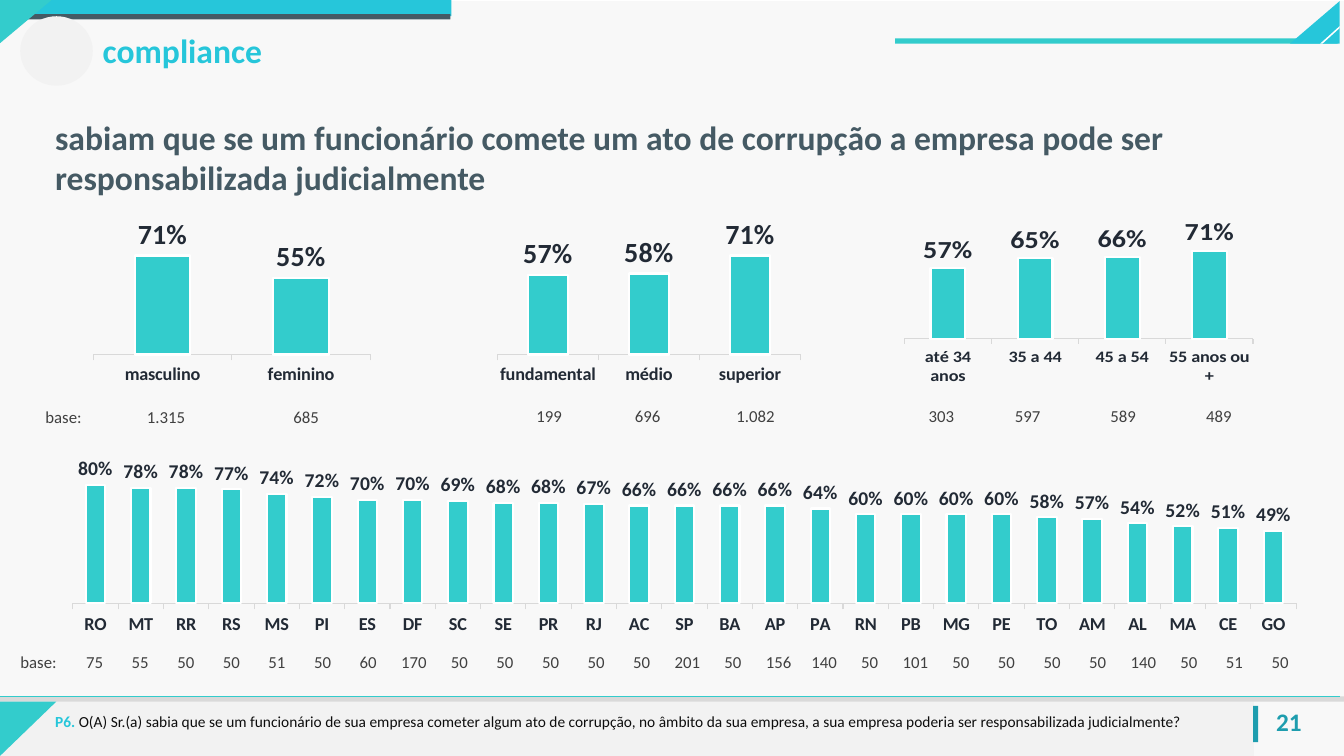
"""Build the compliance slide: awareness of company liability by gender, education, age and state."""
from lxml import etree
from pptx import Presentation
from pptx.chart.data import CategoryChartData
from pptx.dml.color import RGBColor
from pptx.enum.chart import XL_CHART_TYPE, XL_LABEL_POSITION, XL_TICK_MARK
from pptx.enum.dml import MSO_PATTERN
from pptx.enum.shapes import MSO_CONNECTOR, MSO_SHAPE
from pptx.enum.text import MSO_ANCHOR, PP_ALIGN
from pptx.oxml import parse_xml
from pptx.oxml.ns import nsdecls, qn
from pptx.util import Cm, Pt

RECT, OVAL = MSO_SHAPE.RECTANGLE, MSO_SHAPE.OVAL
LEFT, CENTER = PP_ALIGN.LEFT, PP_ALIGN.CENTER
COLUMNS = XL_CHART_TYPE.COLUMN_CLUSTERED
OUTSIDE_END = XL_LABEL_POSITION.OUTSIDE_END
TICK_OUT, TICK_NONE = XL_TICK_MARK.OUTSIDE, XL_TICK_MARK.NONE
W, H = 33.87, 19.05
FONT = "Calibri"
TEAL, CYAN, DARK_TEAL = "33CCCC", "26C6DA", "1E9DAE"
SLATE, NAVY, PALE = "455A64", "222A35", "F2F2F2"
NO_GRID_STYLE = "{2D5ABB26-0587-4C30-8999-92F81FD0307C}"
PLOT_BOX = {"x": 0.036, "y": 0.167, "w": 0.928, "h": 0.659}


def rgb(color):
    """Turn a hex string into a colour."""
    return RGBColor.from_string(color)


def set_font(font, size, color, bold=False):
    """Set face, size, colour and weight of a font."""
    font.name, font.size, font.bold = FONT, Pt(size), bold
    font.color.rgb = rgb(color)


def add_block(s, kind, x, y, w, h, color):
    """Add a plain filled shape."""
    sp = s.shapes.add_shape(kind, Cm(x), Cm(y), Cm(w), Cm(h))
    sp.shadow.inherit = False
    sp.fill.solid()
    sp.fill.fore_color.rgb = rgb(color)
    sp.line.fill.background()
    return sp


def add_polygon(s, points, color):
    """Add a filled closed outline."""
    start, *rest = [(Cm(x), Cm(y)) for x, y in points]
    builder = s.shapes.build_freeform(*start)
    builder.add_line_segments(rest, close=True)
    sp = builder.convert_to_shape()
    sp.shadow.inherit = False
    sp.fill.solid()
    sp.fill.fore_color.rgb = rgb(color)
    sp.line.fill.background()


def add_text(s, x, y, w, h, runs, size, align=LEFT, wrap=True):
    """Add a one-paragraph text box from (text, colour, bold) runs."""
    tf = s.shapes.add_textbox(Cm(x), Cm(y), Cm(w), Cm(h)).text_frame
    tf.word_wrap = wrap
    p = tf.paragraphs[0]
    p.alignment = align
    p.font.name, p.font.size = FONT, Pt(size)
    for text, color, bold in runs:
        r = p.add_run()
        r.text = text
        r.font.bold = bold
        r.font.color.rgb = rgb(color)


def add_backdrop(s, x, y, w, h):
    """Cover the box with the finely striped background."""
    sp = add_block(s, RECT, x, y, w, h, "FFFFFF")
    sp.fill.patterned()
    sp.fill.pattern = MSO_PATTERN.DARK_HORIZONTAL
    sp.fill.fore_color.rgb = rgb("F8F8F8")
    sp.fill.back_color.rgb = rgb("FFFFFF")


def add_header(s, x, y, w):
    """Draw the top bars and corners, the section name and the headline."""
    right = x + w - 0.11
    add_block(s, RECT, x + 0.23, y, 11.15, 0.41, CYAN)
    add_block(s, RECT, x + 0.58, y + 0.36, 10.77, 0.13, SLATE)
    add_polygon(s, [(x, y), (x + 1.3, y), (x, y + 1.09)], TEAL)
    add_block(s, RECT, right - 11.2, y + 0.97, 11.15, 0.13, TEAL)
    add_polygon(s, [(right, y + 0.03), (right - 1.25, y + 1.1), (right, y + 1.1)], CYAN)
    add_polygon(s, [(right, y + 0.71), (right, y + 0.66), (right - 0.49, y + 1.1),
                    (right - 0.43, y + 1.1)], "FFFFFF")
    add_block(s, OVAL, x + 0.51, y + 0.41, 1.83, 1.75, PALE)
    add_text(s, x + 2.34, y + 0.64, 14.81, 1.27, [("compliance", CYAN, True)], 24)
    headline = ("sabiam que se um funcionário comete um ato de corrupção "
                "a empresa pode ser responsabilizada judicialmente")
    add_text(s, x + 1.14, y + 2.82, 31.06, 2.31, [(headline, SLATE, True)], 24)


def add_footer(s, x, y, w, h):
    """Draw the bottom band with the survey question and the page number."""
    add_block(s, RECT, x, y + 0.13, 31.6, h - 0.13, PALE)
    add_block(s, RECT, x, y, w, 0.13, "D9D9D9")
    add_polygon(s, [(x, y + 0.13), (x + 1.42, y + 0.13), (x, y + h)], TEAL)
    line = s.shapes.add_connector(MSO_CONNECTOR.STRAIGHT, Cm(x), Cm(y), Cm(x + w - 0.11), Cm(y))
    line.line.color.rgb = rgb(TEAL)
    line.line.width = Pt(0.5)
    etree.SubElement(line._element.spPr, qn("a:effectLst"))
    add_block(s, RECT, x + 31.58, y + 0.24, 0.13, 0.91, DARK_TEAL)
    add_text(s, x + 31.7, y + 0.13, 1.57, 1.02, [("21", DARK_TEAL, True)], 18, CENTER, False)
    question = ("O(A) Sr.(a) sabia que se um funcionário de sua empresa cometer algum ato de "
                "corrupção, no âmbito da sua empresa, a sua empresa poderia ser "
                "responsabilizada judicialmente?")
    add_text(s, x + 1.14, y + 0.26, 30.51, 0.74,
             [("P6. ", CYAN, True), (question, "0D0D0D", False)], 11)


def add_columns(s, x, y, w, h, cats, percents, label_size, gap, overlap):
    """Add a column chart of percentages with a hidden value axis."""
    fmt = "0%"
    data = CategoryChartData(number_format=fmt)
    data.categories = cats
    data.add_series("Series 1", [v / 100 for v in percents])
    chart = s.shapes.add_chart(COLUMNS, Cm(x), Cm(y), Cm(w), Cm(h), data).chart
    chart.has_legend = chart.has_title = False
    set_font(chart.font, 10, "000000")
    plot = chart.plots[0]
    plot.vary_by_categories = False
    plot.gap_width, plot.overlap = gap, overlap
    series = plot.series[0]
    series.format.fill.solid()
    series.format.fill.fore_color.rgb = rgb(TEAL)
    series.format.line.color.rgb = rgb("FFFFFF")
    series.format.line.width = Pt(1.5)
    labels = series.data_labels
    labels.show_value = True
    labels.position = OUTSIDE_END
    labels.number_format, labels.number_format_is_linked = fmt, False
    set_font(labels.font, label_size, NAVY, True)
    cat, val = chart.category_axis, chart.value_axis
    cat.major_tick_mark, cat.minor_tick_mark = TICK_OUT, TICK_NONE
    cat.format.line.color.rgb = rgb("D9D9D9")
    cat.format.line.width = Pt(0.75)
    set_font(cat.tick_labels.font, 13, NAVY, True)
    val.visible = val.has_major_gridlines = False
    val.minimum_scale, val.maximum_scale = 0, 0.8
    fix_plot_box(chart)


def fix_plot_box(chart):
    """Pin the inner plot area and clear the chart background."""
    space = chart._chartSpace
    area = space.find(".//" + qn("c:plotArea"))
    for old in area.findall(qn("c:layout")):
        area.remove(old)
    modes = "".join(f'<c:{k}Mode val="edge"/>' for k in "xy")
    sizes = "".join(f'<c:{k} val="{v}"/>' for k, v in PLOT_BOX.items())
    area.insert(0, parse_xml(
        f'<c:layout {nsdecls("c")}><c:manualLayout><c:layoutTarget val="inner"/>'
        f'{modes}{sizes}</c:manualLayout></c:layout>'))
    space.find(qn("c:txPr")).addprevious(parse_xml(
        f'<c:spPr {nsdecls("c", "a")}><a:noFill/><a:ln><a:noFill/></a:ln></c:spPr>'))


def add_bases(s, x, y, widths, texts, align, indented, tight):
    """Add the one-row table of sample sizes."""
    h = 0.94
    frame = s.shapes.add_table(1, len(texts), Cm(x), Cm(y), Cm(sum(widths)), Cm(h))
    table = frame.table
    table.first_row = table.horz_banding = False
    table._tbl.tblPr.find(qn("a:tableStyleId")).text = NO_GRID_STYLE
    table.rows[0].height = Cm(h)
    for i, (width, text) in enumerate(zip(widths, texts)):
        table.columns[i].width = Cm(width)
        cell = table.cell(0, i)
        cell.fill.background()
        is_title = text == "base:"
        if tight and not is_title:
            cell.vertical_anchor = MSO_ANCHOR.MIDDLE
            cell.margin_left = cell.margin_right = cell.margin_top = Cm(0.03)
            cell.margin_bottom = 0
        if i == indented:
            cell.margin_left = Cm(0.73)
        p = cell.text_frame.paragraphs[0]
        p.text = text
        p.alignment = LEFT if is_title else align
        p.line_spacing = 1.5
        set_font(p.font, 12, "404040")


def add_panel(s, x, y, w, h, cats, percents, bases, widths, offset, align=CENTER,
              indented=None, tight=False, label_size=20, gap=150, overlap=0):
    """Place a column chart in the box and its sample sizes at an offset from it."""
    add_columns(s, x, y, w, h, cats, percents, label_size, gap, overlap)
    dx, dy = offset
    add_bases(s, x + dx, y + dy, widths, bases, align, indented, tight)


def main():
    """Assemble and save the slide."""
    prs = Presentation()
    prs.slide_width, prs.slide_height = Cm(W), Cm(H)
    s = prs.slides.add_slide(prs.slide_layouts[6])
    add_backdrop(s, 0, 0, W, H)
    add_header(s, 0, 0, W)
    add_footer(s, 0, 17.55, W, 1.5)
    top, height = 5.41, 4.32
    add_panel(s, 2.08, top, 7.52, height, ["masculino", "feminino"], [71, 55],
              ["base:", "1.315", "685"], [2.08, 4.17, 1.63], (-1.19, 4.47), LEFT, 1)
    add_panel(s, 12.24, top, 8.23, height, ["fundamental", "médio", "superior"], [57, 58, 71],
              ["199", "696", "1.082"], [2.72] * 3, (0, 4.45), indented=0)
    add_panel(s, 22.45, top, 9.47, height, ["até 34 anos", "35 a 44", "45 a 54", "55 anos ou +"],
              [57, 65, 66, 71], ["303", "597", "589", "489"], [2.41] * 4, (-0.17, 4.45), indented=0)
    states = "RO MT RR RS MS PI ES DF SC SE PR RJ AC SP BA AP PA RN PB MG PE TO AM AL MA CE GO".split()
    percents = [80, 78, 78, 77, 74, 72, 70, 70, 69, 68, 68, 67, 66, 66, 66, 66, 64,
                60, 60, 60, 60, 58, 57, 54, 52, 51, 49]
    bases = ("base: 75 55 50 50 51 50 60 170 50 50 50 50 50 201 50 156 140 50 101 "
             "50 50 50 50 140 50 51 50").split()
    add_panel(s, 0.64, 11.46, 33.22, 4.55, states, percents, bases, [1.55] + [1.15] * len(states),
              (-0.38, 4.59), tight=True, label_size=14, gap=132, overlap=97)
    prs.save("out.pptx")


if __name__ == "__main__":
    main()
